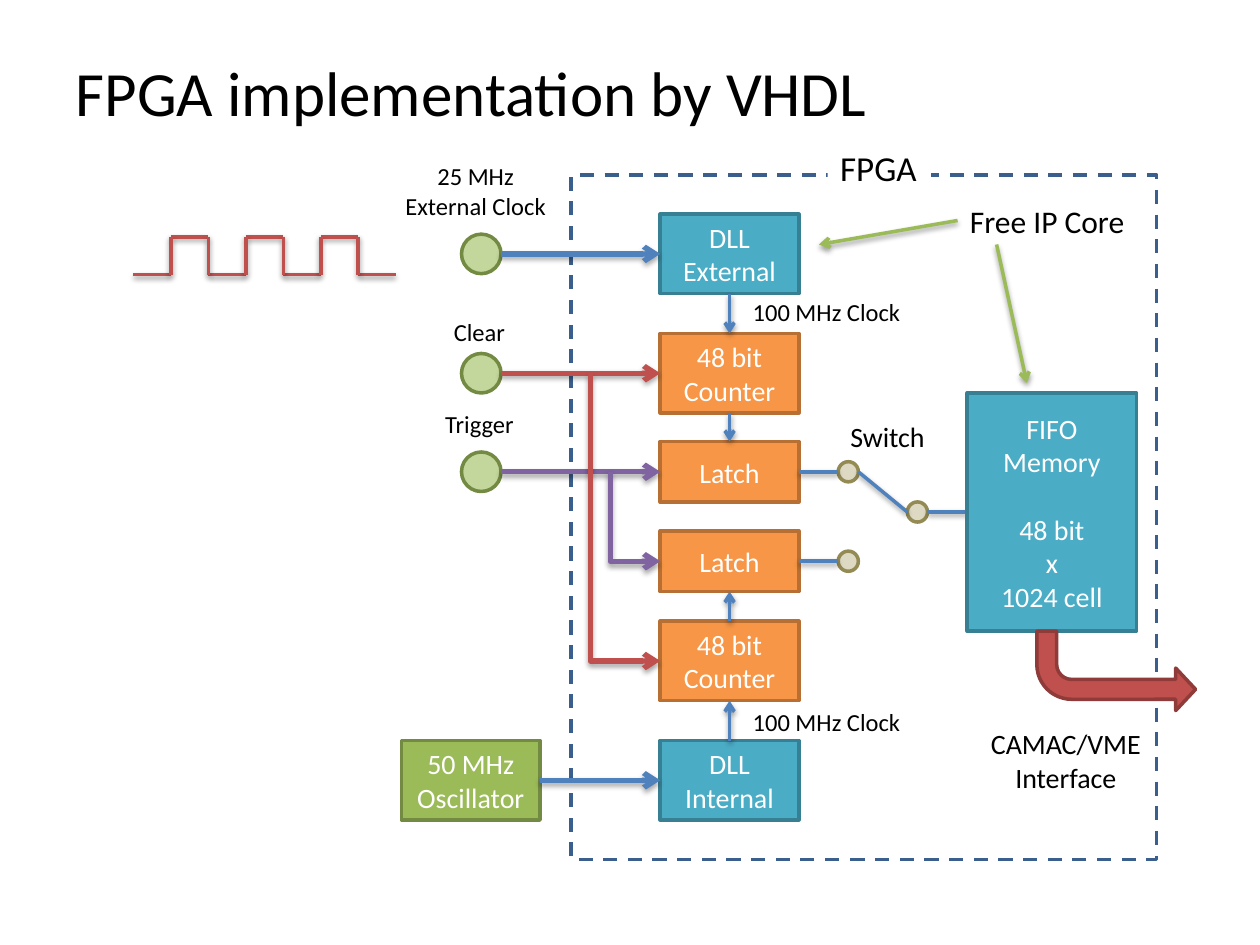
"""Build the slide on an FPGA implementation of a clock counter."""
from lxml.etree import SubElement
from pptx import Presentation
from pptx.dml.color import RGBColor
from pptx.enum.dml import MSO_LINE
from pptx.enum.shapes import MSO_CONNECTOR, MSO_SHAPE
from pptx.enum.text import MSO_ANCHOR, MSO_AUTO_SIZE, PP_ALIGN
from pptx.oxml.ns import qn
from pptx.util import Pt

COLORS = {
    "black": "000000", "white": "FFFFFF",
    "blue": "4F81BD", "navy": "3A5F8C",
    "red": "C0504D", "dark_red": "8E3B39",
    "purple": "8064A2",
    "teal": "4BACC6", "dark_teal": "377F92",
    "orange": "F79646", "dark_orange": "B76F34",
    "green": "9BBB59", "light_green": "C3D69B", "dark_green": "738A42",
    "tan": "DDD9C3", "dark_tan": "948A54",
}
FONT = "Calibri"
MODULE_X, MODULE_W = 377.3, 79.2
MODULE_RIGHT = MODULE_X + MODULE_W
MODULE_MID = MODULE_X + MODULE_W / 2
TALL, SHORT = 45.4, 34.6
MODULES = [
    ("DLL\nExternal", 122.4, TALL, "teal"),
    ("48 bit\nCounter", 190.6, TALL, "orange"),
    ("Latch", 252.3, SHORT, "orange"),
    ("Latch", 303.4, SHORT, "orange"),
    ("48 bit\nCounter", 355, TALL, "orange"),
    ("DLL\nInternal", 423.2, TALL, "teal"),
]
PORT_X, PORT_D = 263.7, 22.6
CONTACT_D = 11.5
OSCILLATOR_X = 229.4


def rgb(name):
    """Return the colour of that name."""
    return RGBColor.from_string(COLORS[name])


def format_text(tf, size, color, align):
    """Format every paragraph and run of a text frame."""
    for p in tf.paragraphs:
        p.alignment = align
        for r in p.runs:
            r.font.size = Pt(size)
            r.font.name = FONT
            r.font.color.rgb = rgb(color)


def add_title(s, text):
    """Place and format the title placeholder."""
    sp = s.shapes.title
    sp.left, sp.top, sp.width, sp.height = Pt(36), Pt(21.6), Pt(648), Pt(61.2)
    tf = sp.text_frame
    tf.text = text
    tf.vertical_anchor = MSO_ANCHOR.MIDDLE
    format_text(tf, 36, "black", PP_ALIGN.LEFT)


def add_shape(s, kind, x, y, w, h, fill, line):
    """Add a preset shape with a 2 pt outline."""
    sp = s.shapes.add_shape(kind, Pt(x), Pt(y), Pt(w), Pt(h))
    sp.shadow.inherit = False
    if fill:
        sp.fill.solid()
        sp.fill.fore_color.rgb = rgb(fill)
    else:
        sp.fill.background()
    sp.line.color.rgb = rgb(line)
    sp.line.width = Pt(2)
    return sp


def add_block(s, text, x, y, w, h, color):
    """Add a labelled rectangle and return its text frame."""
    sp = add_shape(s, MSO_SHAPE.RECTANGLE, x, y, w, h, color, "dark_" + color)
    tf = sp.text_frame
    tf.text = text
    tf.word_wrap = True
    tf.vertical_anchor = MSO_ANCHOR.MIDDLE
    format_text(tf, 16, "white", PP_ALIGN.CENTER)
    return tf


def add_label(s, text, x, y, w, h, size, align=PP_ALIGN.CENTER):
    """Add a text box that does not wrap."""
    sp = s.shapes.add_textbox(Pt(x), Pt(y), Pt(w), Pt(h))
    tf = sp.text_frame
    tf.text = text
    tf.word_wrap = False
    tf.auto_size = MSO_AUTO_SIZE.SHAPE_TO_FIT_TEXT
    format_text(tf, size, "black", align)
    return sp


def style_line(c, color, width, arrow):
    """Set colour, width, arrowhead and shadow of a connector."""
    c.line.color.rgb = rgb(color)
    c.line.width = Pt(width)
    sp_pr = c._element.spPr
    if arrow:
        SubElement(sp_pr.find(qn("a:ln")), qn("a:tailEnd"), type="arrow")
    effects = SubElement(sp_pr, qn("a:effectLst"))
    shadow = SubElement(effects, qn("a:outerShdw"), blurRad=str(Pt(3.1)),
                        dist=str(Pt(1.8 if width == 3 else 1.6)),
                        dir="5400000", rotWithShape="0")
    shade = SubElement(shadow, qn("a:srgbClr"), val=COLORS["black"])
    SubElement(shade, qn("a:alpha"), val="35000" if width == 3 else "38000")


def add_line(shapes, x1, y1, x2, y2, color, width=2, arrow=False):
    """Add a straight connector."""
    c = shapes.add_connector(MSO_CONNECTOR.STRAIGHT, Pt(x1), Pt(y1), Pt(x2), Pt(y2))
    style_line(c, color, width, arrow)


def add_branch(s, x1, y1, x2, y2, color):
    """Add an elbow arrow that goes down and then right."""
    w, h = y2 - y1, x2 - x1
    left, top = (x1 + x2 - w) / 2, (y1 + y2 - h) / 2
    c = s.shapes.add_connector(MSO_CONNECTOR.ELBOW, Pt(left), Pt(top),
                               Pt(left + w), Pt(top + h))
    sp_pr = c._element.spPr
    sp_pr.find(qn("a:prstGeom")).set("prst", "bentConnector2")
    xfrm = sp_pr.find(qn("a:xfrm"))
    xfrm.set("rot", "16200000")
    xfrm.set("flipH", "1")
    style_line(c, color, 3, True)


def add_square_wave(s, x, low, high, step, count):
    """Add a grouped square wave that starts and ends low."""
    shapes = s.shapes.add_group_shape().shapes
    for i in range(count):
        left = x + i * step
        y = high if i % 2 else low
        add_line(shapes, left, y, left + step, y, "red")
        if i:
            add_line(shapes, left, low, left, high, "red")


def add_modules(s):
    """Add the column of modules and the arrows between them."""
    for text, y, h, color in MODULES:
        add_block(s, text, MODULE_X, y, MODULE_W, h, color)
    for a, b in ((0, 1), (1, 2)):
        add_line(s.shapes, MODULE_MID, MODULES[a][1] + TALL,
                 MODULE_MID, MODULES[b][1], "blue", arrow=True)
    for a, b in ((5, 4), (4, 3)):
        add_line(s.shapes, MODULE_MID, MODULES[a][1], MODULE_MID,
                 MODULES[b][1] + MODULES[b][2], "blue", arrow=True)


def add_inputs(s, mids):
    """Add the input ports, the oscillator and their arrows."""
    for mid, color in zip(mids, ("blue", "red", "purple")):
        add_shape(s, MSO_SHAPE.OVAL, PORT_X, mid - PORT_D / 2, PORT_D, PORT_D,
                  "light_green", "dark_green")
        add_line(s.shapes, PORT_X + PORT_D, mid, MODULE_X, mid, color, 3, True)
    add_block(s, "50 MHz\nOscillator", OSCILLATOR_X, MODULES[5][1], MODULE_W, TALL, "green")
    add_line(s.shapes, OSCILLATOR_X + MODULE_W, mids[5], MODULE_X, mids[5], "blue", 3, True)
    add_branch(s, 337.4, mids[1], MODULE_X, mids[4], "red")
    add_branch(s, 348.7, mids[2], MODULE_X, mids[3], "purple")


def add_memory(s, mids):
    """Add the switch, the memory and the output arrow."""
    x, pole_x, pole_y, memory_x = 479, 518.5, 292.6, 552.7
    for left, mid in ((x, mids[2]), (x, mids[3]), (pole_x, pole_y)):
        add_shape(s, MSO_SHAPE.OVAL, left, mid - CONTACT_D / 2, CONTACT_D, CONTACT_D,
                  "tan", "dark_tan")
    for mid in mids[2:4]:
        add_line(s.shapes, MODULE_RIGHT, mid, x, mid, "blue")
    add_line(s.shapes, pole_x, pole_y, x + CONTACT_D, mids[2], "blue")
    add_line(s.shapes, pole_x + CONTACT_D, pole_y, memory_x, pole_y, "blue")
    tf = add_block(s, "FIFO Memory\n48 bit\nx\n1024 cell", memory_x, 224.5, 96.7, 136.2, "teal")
    tf.paragraphs[1].space_before = Pt(19.5)
    sp = add_shape(s, MSO_SHAPE.BENT_ARROW, 592.5, 360.7, 90.7, 45.4, "red", "dark_red")
    for i, value in enumerate((0.25, 0.268, 0.25, 0.438)):
        sp.adjustments[i] = value
    sp._element.spPr.find(qn("a:xfrm")).set("flipV", "1")


def add_labels(s):
    """Add the captions and the arrows to the IP cores."""
    sp = add_label(s, "FPGA", 473, 80, 59, 31.5, 20, PP_ALIGN.LEFT)
    sp.fill.solid()
    sp.fill.fore_color.rgb = rgb("white")
    add_label(s, "CAMAC/VME\nInterface", 558.7, 411.8, 100.8, 46, 16)
    add_label(s, "Switch", 478.8, 236.2, 57.6, 26.6, 16, PP_ALIGN.LEFT)
    add_label(s, "Free IP Core", 547.2, 111.6, 103.7, 29, 18, PP_ALIGN.LEFT)
    add_label(s, "25 MHz\nExternal Clock", 223.9, 88.6, 95.8, 41, 14)
    add_label(s, "Clear", 252, 177.8, 43.9, 24.5, 14)
    add_label(s, "Trigger", 247, 230.4, 54, 24.5, 14)
    for y in (166.3, 400.3):
        add_label(s, "100 MHz Clock", 422.6, y, 99.4, 24.5, 14)
    add_line(s.shapes, 547.2, 126, 468, 139.7, "green", arrow=True)
    add_line(s.shapes, 569.5, 139.7, 586.8, 218.9, "green", arrow=True)


def main():
    """Build and save the slide."""
    prs = Presentation()
    prs.slide_width, prs.slide_height = Pt(720), Pt(540)
    s = prs.slides.add_slide(prs.slide_layouts[5])
    mids = [y + h / 2 for _, y, h, _ in MODULES]
    add_title(s, "FPGA implementation by VHDL")
    sp = add_shape(s, MSO_SHAPE.RECTANGLE, 326.2, 100.1, 334.8, 391, None, "navy")
    sp.line.dash_style = MSO_LINE.DASH
    add_modules(s)
    add_inputs(s, mids)
    add_memory(s, mids)
    add_labels(s)
    add_square_wave(s, 76.3, 157, 135.4, 21.4, 7)
    prs.save("out.pptx")


if __name__ == "__main__":
    main()
